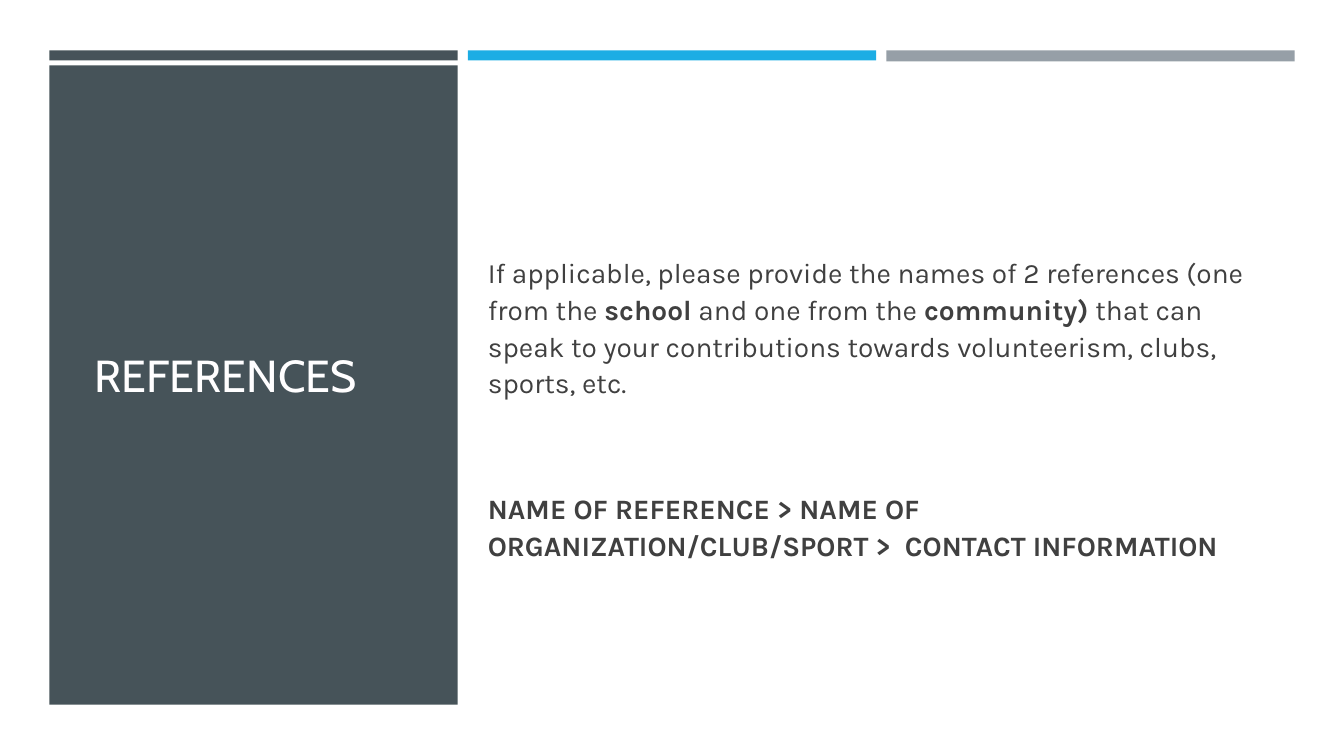
"""Build the References slide with its side panel and instructions."""
from pptx import Presentation
from pptx import util as u
from pptx.dml.color import RGBColor
from pptx.enum import shapes, text

SLATE = RGBColor(0x46, 0x53, 0x59)
BLUE = RGBColor(0x1C, 0xAD, 0xE4)
GREY = RGBColor(0x96, 0x9F, 0xA7)
WHITE = RGBColor(0xFF, 0xFE, 0xFF)
CHARCOAL = RGBColor(0x40, 0x40, 0x40)

TITLE = [[("REFERENCES", False)]]
INSTRUCTIONS = [
    [
        ("If applicable, please provide the names of 2 references (one from the ", False),
        ("school", True),
        (" and one from the ", False),
        ("community)", True),
        (" that can speak to your contributions towards volunteerism, clubs, sports, etc.", False),
    ],
    [("NAME OF REFERENCE > NAME OF ORGANIZATION/CLUB/SPORT >  CONTACT INFORMATION", True)],
]

COLUMN_LEFT, COLUMN_WIDTH, COLUMN_STEP = 0.49, 4.05, 4.15
BARS = [(SLATE, 0.1), (BLUE, 0.1), (GREY, 0.11)]


def add_block(slide, left, top, width, height, color):
    shape = slide.shapes.add_shape(
        shapes.MSO_SHAPE.RECTANGLE, *map(u.Inches, (left, top, width, height)))
    shape.shadow.inherit = False
    shape.fill.solid()
    shape.fill.fore_color.rgb = color
    shape.line.fill.background()


def add_text(slide, box, paragraphs, font, size, color, line_spacing=1.0, gap=0):
    frame = slide.shapes.add_textbox(*map(u.Inches, box)).text_frame
    frame.word_wrap = True
    frame.vertical_anchor = text.MSO_ANCHOR.MIDDLE
    for index, pieces in enumerate(paragraphs):
        paragraph = frame.add_paragraph() if index else frame.paragraphs[0]
        paragraph.line_spacing = line_spacing
        paragraph.space_before = u.Pt(gap if index else 0)
        for wording, bold in pieces:
            run = paragraph.add_run()
            run.text = wording
            run.font.name = font
            run.font.size = u.Pt(size)
            run.font.bold = bold
            run.font.color.rgb = color


def main():
    presentation = Presentation()
    presentation.slide_width = u.Inches(13.33)
    presentation.slide_height = u.Inches(7.5)
    slide = presentation.slides.add_slide(presentation.slide_layouts[6])

    for column, (color, height) in enumerate(BARS):
        add_block(slide, COLUMN_LEFT + column * COLUMN_STEP, 0.5, COLUMN_WIDTH, height, color)
    add_block(slide, COLUMN_LEFT, 0.65, COLUMN_WIDTH, 6.34, SLATE)

    add_text(slide, (0.84, 1.14, 3.34, 5.15), TITLE, "Cabin", 32, WHITE)
    add_text(slide, (4.74, 1.4, 8.1, 5.27), INSTRUCTIONS, "Karla", 20, CHARCOAL,
             line_spacing=1.1, gap=63)

    presentation.save("out.pptx")


if __name__ == "__main__":
    main()
